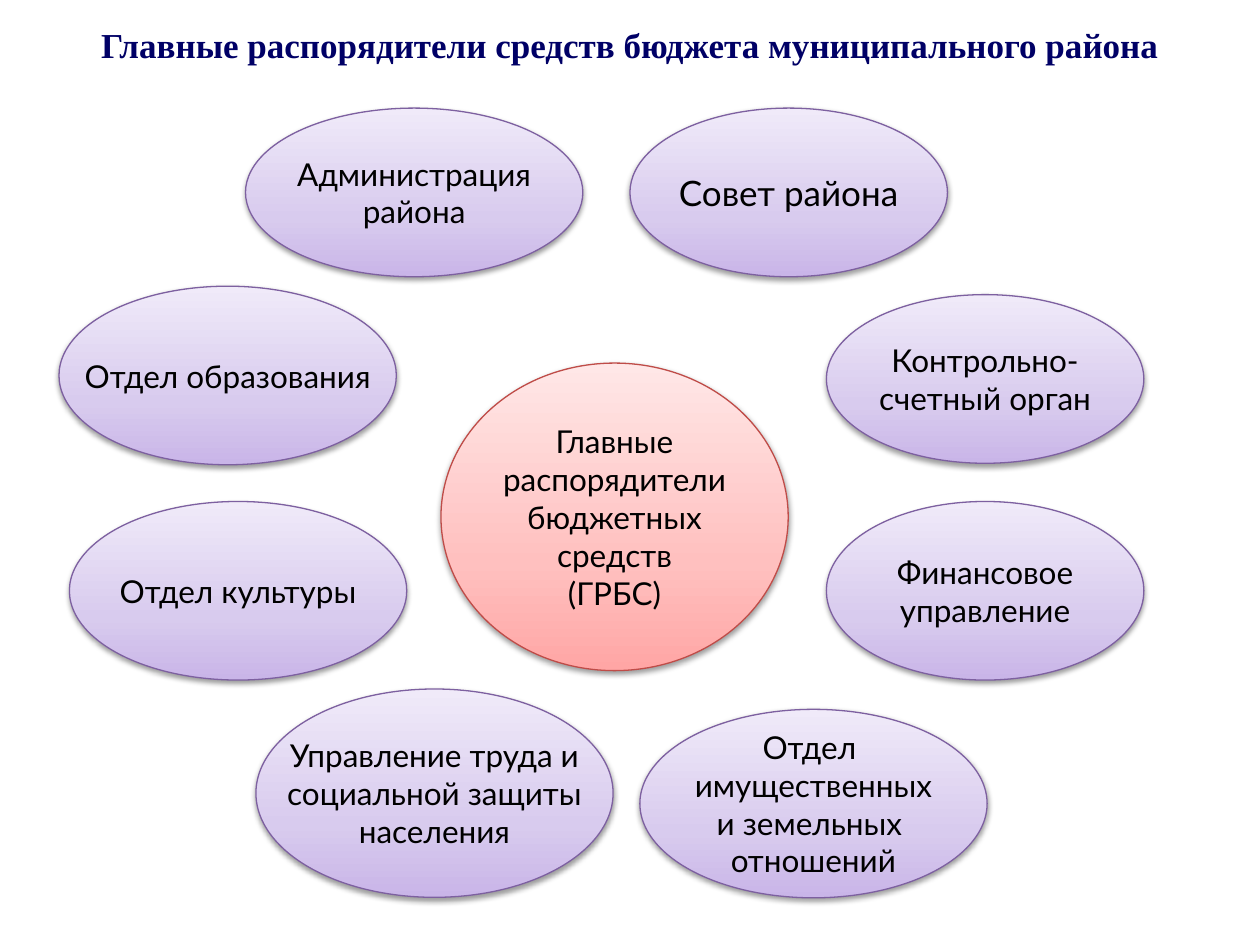
from lxml.etree import SubElement
from pptx import Presentation
from pptx.dml.color import RGBColor
from pptx.enum.shapes import MSO_SHAPE as Shape
from pptx.enum.text import MSO_ANCHOR as Anchor, MSO_AUTO_SIZE as AutoSize, PP_ALIGN as Align
from pptx.oxml import parse_xml
from pptx.oxml.ns import nsdecls, qn
from pptx.util import Cm, Pt

# Content: lines, (left, top, width, height) in cm, text size
TITLE = "Главные распорядители средств бюджета муниципального района"
CENTER = (["Главные", "распорядители", "бюджетных", "средств", "(ГРБС)"],
          (8.89, 7.32, 7, 6.2), 18)
DEPARTMENTS = [
    (["Совет района"], (12.7, 2.18, 6.4, 3.4), 20),
    (["Контрольно-", "счетный орган"], (16.66, 5.94, 6.4, 3.4), 18),
    (["Администрация", "района"], (4.95, 2.18, 6.8, 3.4), 18),
    (["Финансовое", "управление"], (16.66, 10.11, 6.4, 3.6), 18),
    (["Отдел ", "имущественных", "и земельных ", "отношений"],
     (12.9, 14.3, 7, 3.8), 18),
    (["Управление труда и", "социальной защиты", "населения"],
     (5.16, 13.89, 7.2, 4.2), 18),
    (["Отдел культуры"], (1.4, 10.11, 6.8, 3.6), 18),
    (["Отдел образования"], (1.19, 5.77, 6.8, 3.6), 18),
]

# Gradient colours from bottom to top, then the outline
STOPS = (0, 35, 100)
RED = (("FFA6A5", "FFC0BF", "FFE7E7"), "BF4C48")
PURPLE = (("C9B5E8", "D8CBEE", "F0EAF9"), "7D60A0")


def color(value):
    return RGBColor.from_string(value)


def write(shape, lines, size=18, font="Lato", fill="000000", bold=False,
          anchor=Anchor.MIDDLE, wrap=False):
    frame = shape.text_frame
    frame.word_wrap = wrap
    frame.auto_size = AutoSize.NONE
    frame.vertical_anchor = anchor
    frame.text = "\n".join(lines)
    for paragraph in frame.paragraphs:
        paragraph.alignment = Align.CENTER
        paragraph.font.size = Pt(size)
        paragraph.font.name = font
        paragraph.font.bold = bold
        paragraph.font.color.rgb = color(fill)


def add_gradient(shape, colors):
    stops = "".join(
        f'<a:gs pos="{position * 1000}"><a:srgbClr val="{value}"/></a:gs>'
        for position, value in zip(STOPS, colors))
    gradient = parse_xml(
        f'<a:gradFill {nsdecls("a")} rotWithShape="1"><a:gsLst>{stops}</a:gsLst>'
        '<a:lin ang="16200000" scaled="0"/></a:gradFill>')
    shape.element.spPr.find(qn("a:prstGeom")).addnext(gradient)


def add_shadow(shape):
    shape.shadow.inherit = False
    effects = shape.element.spPr.find(qn("a:effectLst"))
    shadow = SubElement(effects, qn("a:outerShdw"), blurRad=str(Pt(3.1)),
                        dist=str(Pt(1.6)), dir="5400000", rotWithShape="0")
    black = SubElement(shadow, qn("a:srgbClr"), val="000000")
    SubElement(black, qn("a:alpha"), val="38000")


def add_bubble(slide, kind, style, lines, box, size):
    colors, outline = style
    shape = slide.shapes.add_shape(kind, *map(Cm, box))
    add_gradient(shape, colors)
    shape.line.color.rgb = color(outline)
    shape.line.width = Pt(0.75)
    add_shadow(shape)
    write(shape, lines, size=size)


def main():
    presentation = Presentation()
    presentation.slide_width, presentation.slide_height = Cm(25.4), Cm(19.05)
    slide = presentation.slides.add_slide(presentation.slide_layouts[6])

    # Title
    title = slide.shapes.add_textbox(Cm(0.6), Cm(0), Cm(24.2), Cm(1.45))
    write(title, [TITLE], size=20, font="Times New Roman", fill="000066",
          bold=True, anchor=Anchor.BOTTOM, wrap=True)

    # Centre and the departments around it
    add_bubble(slide, Shape.FLOWCHART_CONNECTOR, RED, *CENTER)
    for department in DEPARTMENTS:
        add_bubble(slide, Shape.OVAL, PURPLE, *department)

    presentation.save("out.pptx")


if __name__ == "__main__":
    main()
